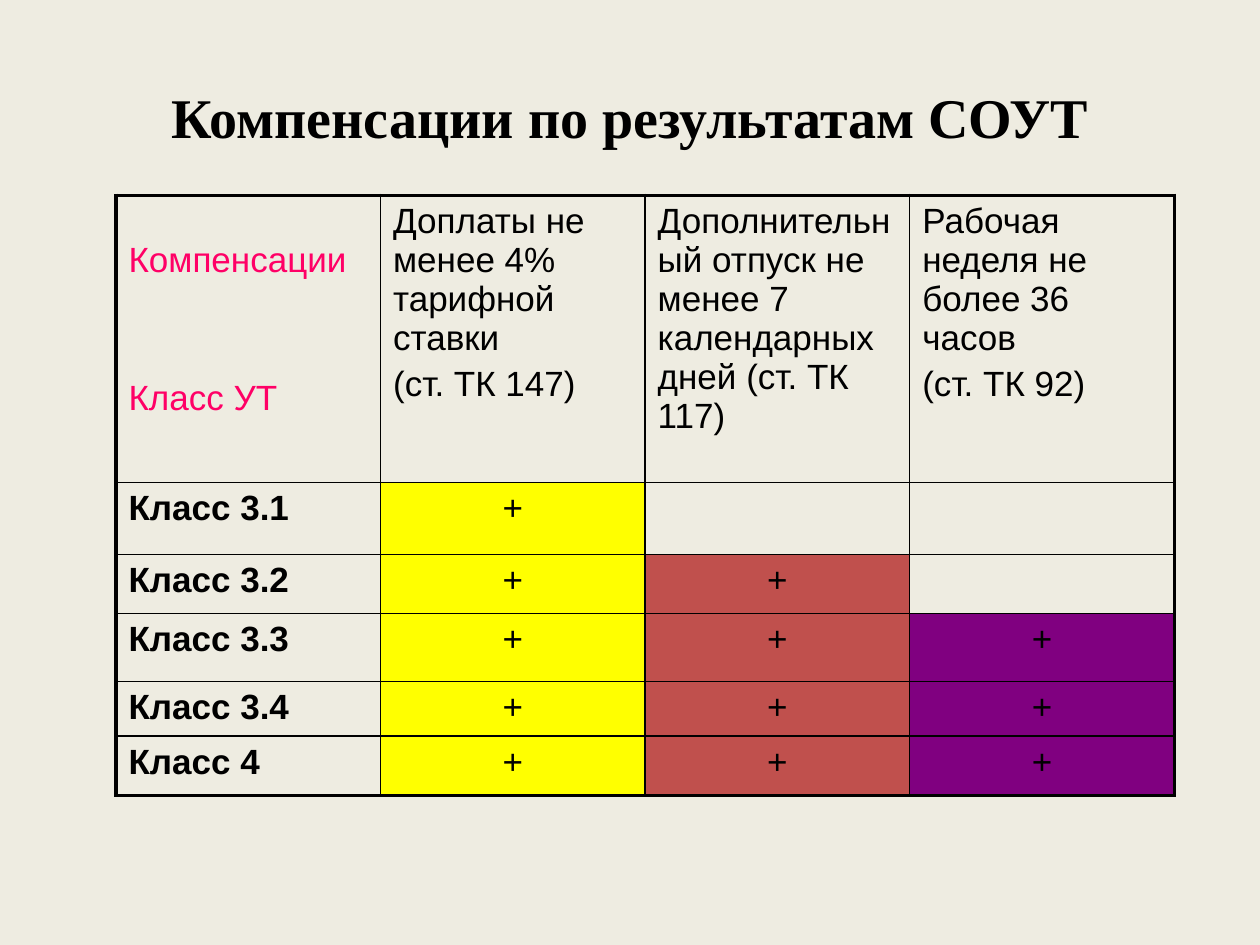
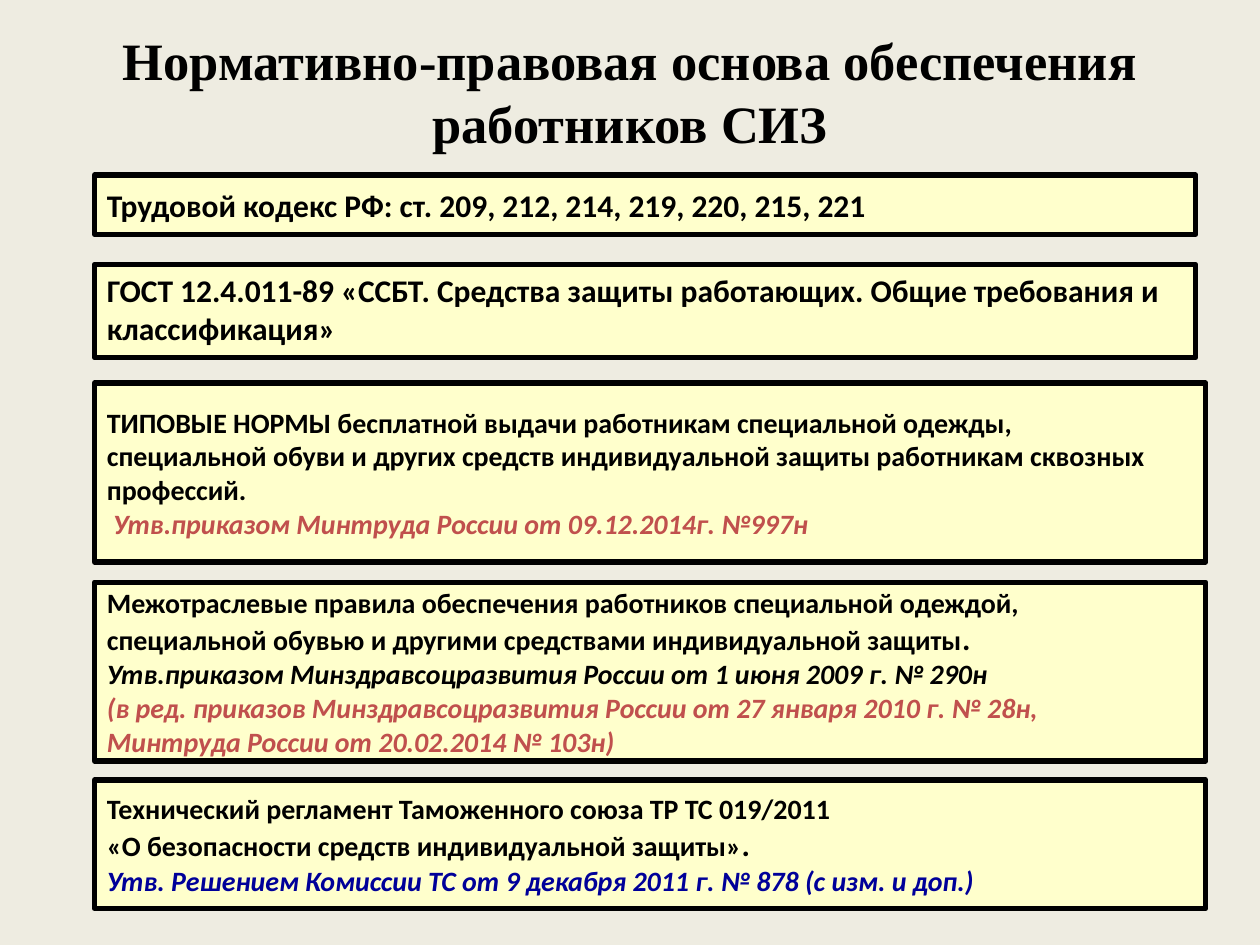
from dataclasses import dataclass

import lxml.etree
import pptx
import pptx.dml.color
import pptx.enum.shapes
import pptx.enum.text
import pptx.oxml.ns
import pptx.presentation
import pptx.slide
import pptx.table
import pptx.util

Inches = pptx.util.Inches
Pt = pptx.util.Pt
RGBColor = pptx.dml.color.RGBColor
PP_ALIGN = pptx.enum.text.PP_ALIGN
MSO_ANCHOR = pptx.enum.text.MSO_ANCHOR

BACKGROUND = RGBColor(0xEE, 0xEC, 0xE1)
BLACK = RGBColor(0x00, 0x00, 0x00)
PINK = RGBColor(0xFF, 0x00, 0x66)
YELLOW = RGBColor(0xFF, 0xFF, 0x00)
BRICK = RGBColor(0xC0, 0x50, 0x4D)
PURPLE = RGBColor(0x80, 0x00, 0x80)
CREAM = RGBColor(0xFF, 0xFF, 0xCC)
NAVY = RGBColor(0x00, 0x00, 0x99)

TITLE_FONT = "Times New Roman"
TABLE_FONT = "Arial"
ACT_FONT = "Calibri"


@dataclass(frozen=True)
class Span:
    text: str
    size: float = 16
    color: RGBColor = BLACK
    bold: bool = True
    italic: bool = False


@dataclass(frozen=True)
class LegalAct:
    top: float
    width: float
    height: float
    lines: tuple[tuple[Span, ...], ...]
    anchor: MSO_ANCHOR = MSO_ANCHOR.MIDDLE


@dataclass(frozen=True)
class Heading:
    lines: tuple[str, ...]
    color: RGBColor = BLACK
    margin_top: float = 0.05
    gap: float = 4


@dataclass(frozen=True)
class WorkClass:
    name: str
    compensations: int
    height: float


HEADINGS = (
    Heading(("Компенсации", "Класс УТ"), PINK, 0.36, 56.5),
    Heading(("Доплаты не менее 4% тарифной ставки", "(ст. ТК 147)")),
    Heading(("Дополнительный отпуск не менее 7 календарных дней (ст. ТК 117)",)),
    Heading(("Рабочая неделя не более 36 часов", "(ст. ТК 92)")),
)
HEADING_HEIGHT = 2.28
COLUMN_WIDTH = 2.1
COMPENSATION_FILLS = (YELLOW, BRICK, PURPLE)
WORK_CLASSES = (
    WorkClass("Класс 3.1", 1, 0.57),
    WorkClass("Класс 3.2", 2, 0.47),
    WorkClass("Класс 3.3", 3, 0.54),
    WorkClass("Класс 3.4", 3, 0.41),
    WorkClass("Класс 4", 3, 0.47),
)

LEGAL_ACTS = (
    LegalAct(1.39, 8.74, 0.47, (
        (Span("Трудовой кодекс РФ: ст. 209, 212, 214, 219, 220, 215, 221", 18),),
    )),
    LegalAct(2.1, 8.74, 0.74, (
        (Span("ГОСТ 12.4.011-89 «ССБТ. Средства защиты работающих. "
              "Общие требования и классификация»", 18),),
    ), MSO_ANCHOR.TOP),
    LegalAct(3.04, 8.82, 1.42, (
        (Span("ТИПОВЫЕ НОРМЫ бесплатной выдачи работникам специальной одежды,"),),
        (Span("специальной обуви и других средств индивидуальной защиты "
              "работникам сквозных"),),
        (Span("профессий."),),
        (Span(" "), Span("Утв.приказом Минтруда России от 09.12.2014г. №997н",
                         color=BRICK, italic=True)),
    )),
    LegalAct(4.62, 8.82, 1.42, (
        (Span("Межотраслевые правила обеспечения работников специальной одеждой,"),),
        (Span("специальной обувью и другими средствами индивидуальной защиты"),
         Span(".", 18)),
        (Span("Утв.приказом Минздравсоцразвития России от 1 июня 2009 г. № 290н",
              italic=True),),
        (Span("(в ред. приказов Минздравсоцразвития России "
              "от 27 января 2010 г. № 28н,", color=BRICK, italic=True),),
        (Span("Минтруда России от 20.02.2014 № 103н)", color=BRICK, italic=True),),
    )),
    LegalAct(6.19, 8.82, 1.02, (
        (Span("Технический регламент Таможенного союза ТР ТС 019/2011"),),
        (Span("«О безопасности средств индивидуальной защиты»"), Span(".", 18)),
        (Span("Утв. Решением Комиссии ТС от 9 декабря 2011 г. № 878 (с изм. и доп.)",
              color=NAVY, italic=True),),
    )),
)


def write_line(paragraph, spans: tuple[Span, ...], font: str,
               align: PP_ALIGN = PP_ALIGN.LEFT) -> None:
    paragraph.alignment = align
    for span in spans:
        run = paragraph.add_run()
        run.text = span.text
        run.font.name = font
        run.font.size = Pt(span.size)
        run.font.bold = span.bold
        run.font.italic = span.italic
        run.font.color.rgb = span.color


def write_lines(frame, lines: tuple[tuple[Span, ...], ...], font: str,
                align: PP_ALIGN = PP_ALIGN.LEFT, gap: float = 0) -> None:
    frame.word_wrap = True
    for index, spans in enumerate(lines):
        paragraph = frame.add_paragraph() if index else frame.paragraphs[0]
        if index:
            paragraph.space_before = Pt(gap)
        write_line(paragraph, spans, font, align)


def add_titled_slide(deck: pptx.presentation.Presentation, title: str,
                     height: float, size: float) -> pptx.slide.Slide:
    slide = deck.slides.add_slide(deck.slide_layouts[6])
    slide.background.fill.solid()
    slide.background.fill.fore_color.rgb = BACKGROUND
    frame = slide.shapes.add_textbox(
        Inches(0.5), Inches(0.3), Inches(9), Inches(height)).text_frame
    frame.vertical_anchor = MSO_ANCHOR.MIDDLE
    write_lines(frame, ((Span(title, size),),), TITLE_FONT, PP_ALIGN.CENTER)
    return slide


def set_borders(cell, outer_sides: dict[str, bool]) -> None:
    properties = cell._tc.get_or_add_tcPr()
    for side, outer in outer_sides.items():
        line = lxml.etree.SubElement(
            properties, pptx.oxml.ns.qn(f"a:ln{side}"),
            w=str(Pt(2.25 if outer else 1)))
        fill = lxml.etree.SubElement(line, pptx.oxml.ns.qn("a:solidFill"))
        lxml.etree.SubElement(fill, pptx.oxml.ns.qn("a:srgbClr"), val=str(BLACK))


def style_grid(table: pptx.table.Table) -> None:
    table.first_row = False
    table.horz_banding = False
    last_row, last_column = len(table.rows) - 1, len(table.columns) - 1
    for column in table.columns:
        column.width = Inches(COLUMN_WIDTH)
    for row_index, row in enumerate(table.rows):
        for column_index, cell in enumerate(row.cells):
            set_borders(cell, {
                "L": column_index == 0,
                "R": column_index == last_column,
                "T": row_index == 0,
                "B": row_index == last_row,
            })
            cell.fill.background()


def add_compensation_table(slide: pptx.slide.Slide) -> None:
    heights = [HEADING_HEIGHT] + [work_class.height for work_class in WORK_CLASSES]
    table = slide.shapes.add_table(
        len(heights), len(HEADINGS), Inches(0.92), Inches(1.55),
        Inches(COLUMN_WIDTH * len(HEADINGS)), Inches(sum(heights))).table
    style_grid(table)
    for row, height in zip(table.rows, heights):
        row.height = Inches(height)
    for cell, heading in zip(table.rows[0].cells, HEADINGS):
        cell.margin_top = Inches(heading.margin_top)
        lines = tuple((Span(line, 20, heading.color, False),) for line in heading.lines)
        write_lines(cell.text_frame, lines, TABLE_FONT, gap=heading.gap)
    for row_index, work_class in enumerate(WORK_CLASSES, start=1):
        write_lines(table.cell(row_index, 0).text_frame,
                    ((Span(work_class.name, 20),),), TABLE_FONT)
        fills = COMPENSATION_FILLS[:work_class.compensations]
        for column_index, color in enumerate(fills, start=1):
            cell = table.cell(row_index, column_index)
            cell.fill.solid()
            cell.fill.fore_color.rgb = color
            write_lines(cell.text_frame, ((Span("+", 20, bold=False),),),
                        TABLE_FONT, PP_ALIGN.CENTER)


def add_legal_act(slide: pptx.slide.Slide, act: LegalAct) -> None:
    panel = slide.shapes.add_shape(
        pptx.enum.shapes.MSO_SHAPE.RECTANGLE, Inches(0.75), Inches(act.top),
        Inches(act.width), Inches(act.height))
    panel.shadow.inherit = False
    panel.fill.solid()
    panel.fill.fore_color.rgb = CREAM
    panel.line.color.rgb = BLACK
    panel.line.width = Pt(3)
    panel.text_frame.vertical_anchor = act.anchor
    write_lines(panel.text_frame, act.lines, ACT_FONT)


def main() -> None:
    deck = pptx.Presentation()
    deck.slide_width = Inches(10)
    deck.slide_height = Inches(7.5)

    compensations = add_titled_slide(deck, "Компенсации по результатам СОУТ", 1.25, 32)
    add_compensation_table(compensations)

    legal_basis = add_titled_slide(
        deck, "Нормативно-правовая основа обеспечения работников СИЗ", 0.85, 30)
    for act in LEGAL_ACTS:
        add_legal_act(legal_basis, act)

    deck.save("out.pptx")


if __name__ == "__main__":
    main()
